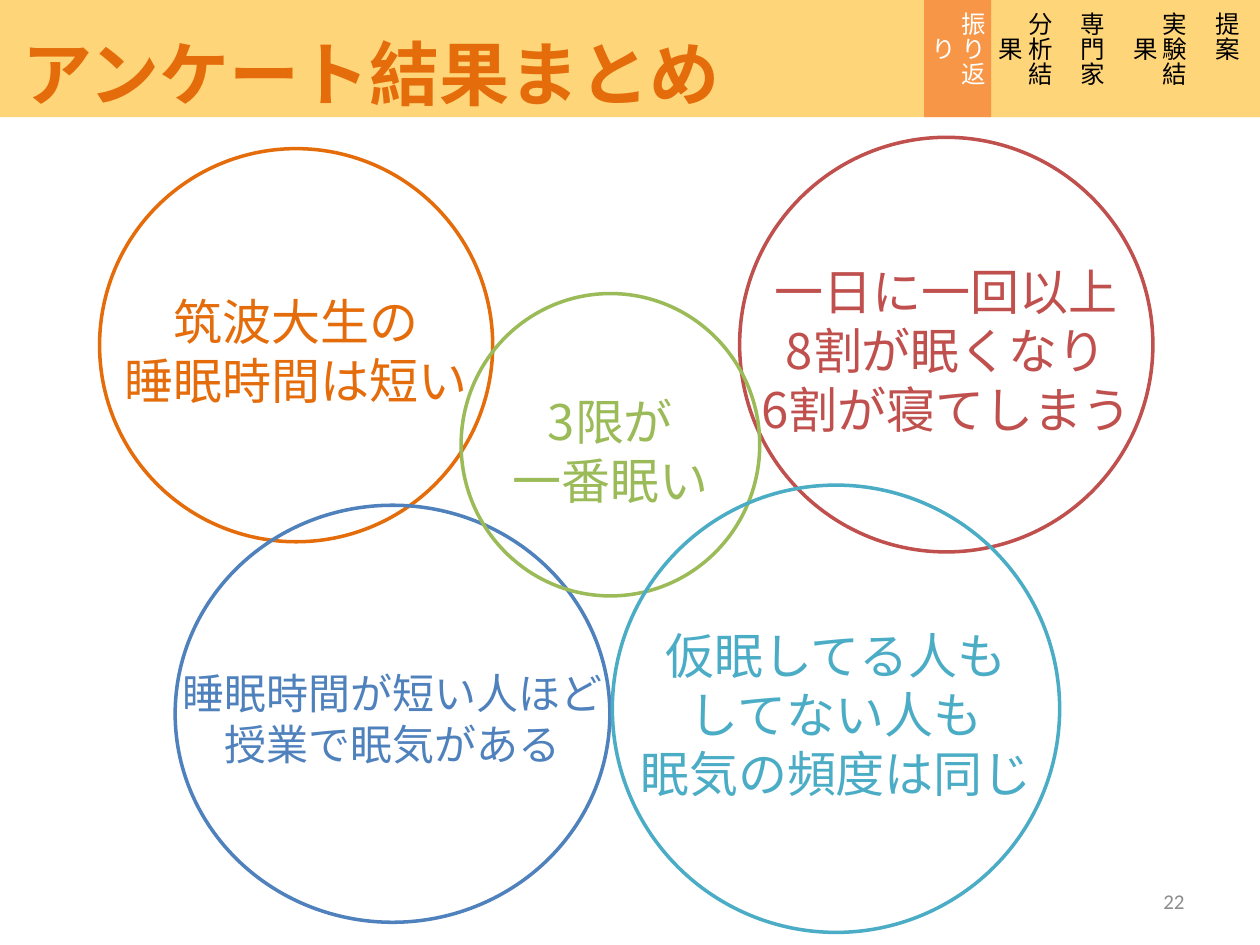
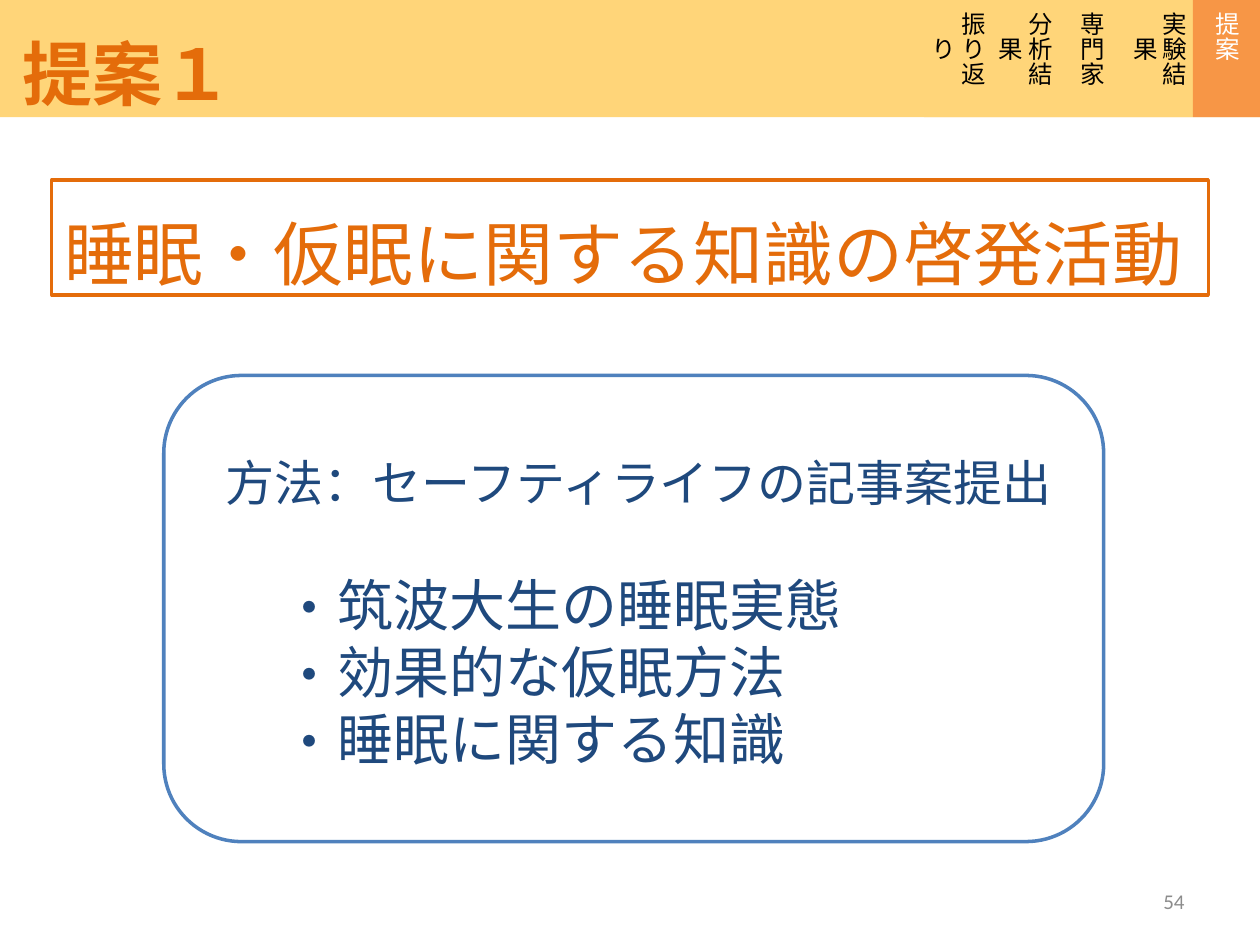
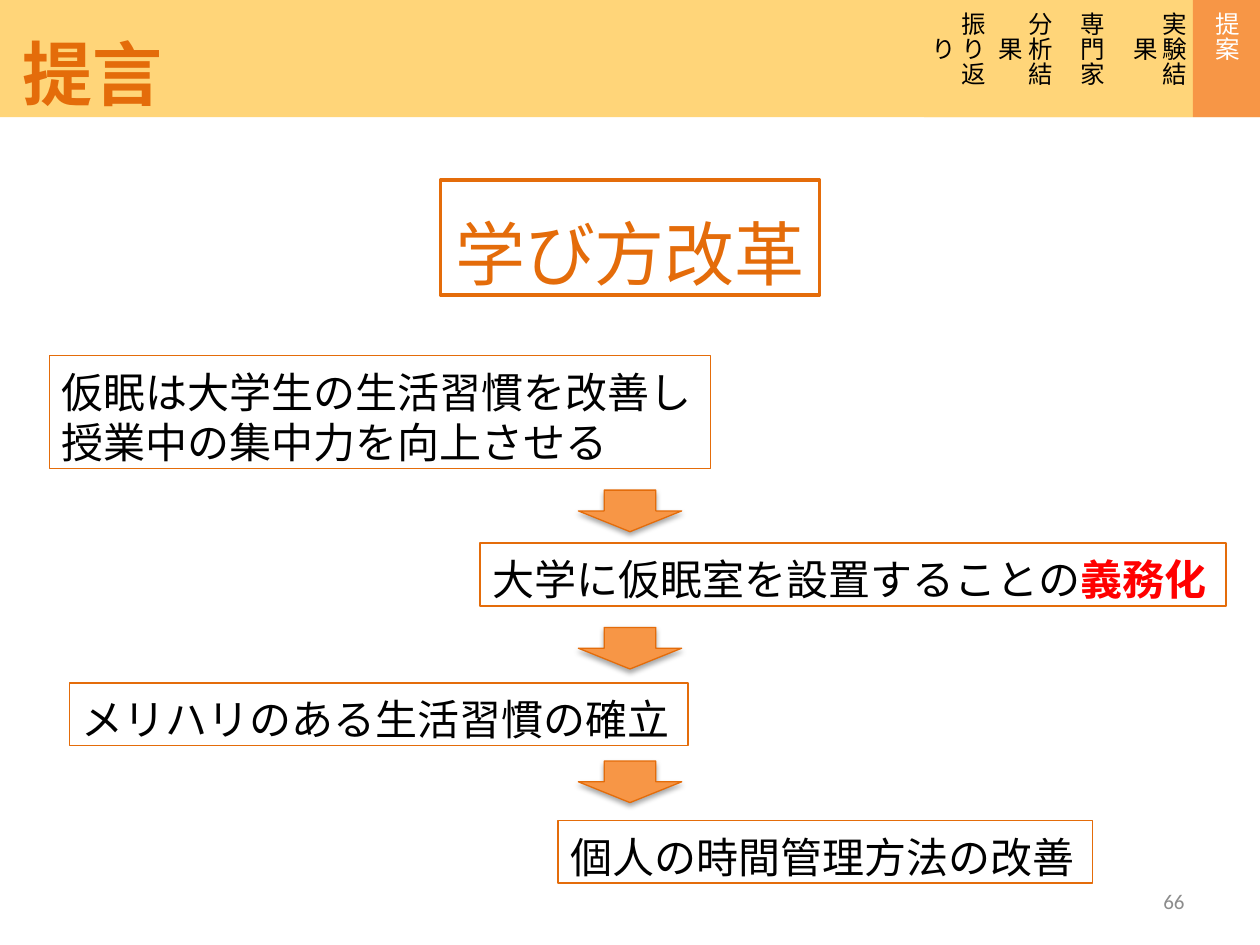
from lxml.etree import SubElement
from pptx import Presentation
from pptx.dml.color import RGBColor
from pptx.enum.shapes import MSO_SHAPE
from pptx.enum.text import MSO_ANCHOR, MSO_AUTO_SIZE, PP_ALIGN
from pptx.oxml.ns import qn
from pptx.util import Inches, Pt

WIDE, HIGH = 10, 7.5
BAND = 0.93
STEP = 0.533
LEAD = 1.2
DROP = 0.11
FACE = "Noto Sans CJK JP"
DEEP, WARM, PALE = "E46C0A", "F79646", "FFD579"
BLUE, NAVY, RED = "4F81BD", "1F497D", "FF0000"
BLACK, WHITE, GREY = "000000", "FFFFFF", "8C8C8C"
LEFT, MID, RIGHT = PP_ALIGN.LEFT, PP_ALIGN.CENTER, PP_ALIGN.RIGHT

TABS = ["振り返り", "分析結果", "専門家", "実験結果", "提案"]

RINGS = [
    ((0.79, 1.18, 3.12, 3.12), 2.95, 28, DEEP, ["筑波大生の", "睡眠時間は短い"]),
    ((1.39, 4.01, 3.45, 3.31), 3.57, 24, BLUE, ["睡眠時間が短い人ほど", "授業で眠気がある"]),
    ((5.87, 1.09, 3.28, 3.29), 3.19, 28, "C0504D",
     ["一日に一回以上", "8割が眠くなり", "6割が寝てしまう"]),
    ((3.66, 2.33, 2.37, 2.4), 1.77, 28, "9BBB59", ["3限が", "一番眠い"]),
    ((4.86, 3.85, 3.55, 3.55), 3.34, 28, "4BACC6",
     ["仮眠してる人も", "してない人も", "眠気の頻度は同じ"]),
]

PLAN = "方法：セーフティライフの記事案提出"
ITEMS = ["筑波大生の睡眠実態", "効果的な仮眠方法", "睡眠に関する知識"]

NOTES = [
    (0.39, 2.82, 5.25, ["仮眠は大学生の生活習慣を改善し", "授業中の集中力を向上させる"]),
    (3.81, 4.31, 5.92, [[("大学に仮眠室を設置することの", {}),
                         ("義務化", {"color": RED, "bold": True})]]),
    (0.55, 5.42, 4.91, ["メリハリのある生活習慣の確立"]),
    (4.43, 6.51, 4.24, ["個人の時間管理方法の改善"]),
]
DROPS = [3.89, 4.98, 6.04]


def tint(code):
    return RGBColor.from_string(code)


def put(obj, **vals):
    for key, val in vals.items():
        setattr(obj, key, val)


def place(shape, box):
    put(shape, **dict(zip(("left", "top", "width", "height"), map(Inches, box))))


def lift(shape):
    shape.element.getparent().append(shape.element)


def tall(count, size):
    return count * size * LEAD / 72 + 0.1


def draw(slide, kind, box, fill=None, line=None, weight=2):
    shape = slide.shapes.add_shape(kind, *map(Inches, box))
    shape.shadow.inherit = False
    if fill:
        shape.fill.solid()
        shape.fill.fore_color.rgb = tint(fill)
    else:
        shape.fill.background()
    if line:
        shape.line.color.rgb = tint(line)
        shape.line.width = Pt(weight)
    else:
        shape.line.fill.background()
    return shape


def style(run, size, color, bold=False, face=FACE):
    put(run.font, size=Pt(size), bold=bold, name=face)
    run.font.color.rgb = tint(color)
    SubElement(run._r.get_or_add_rPr(), qn("a:ea"), typeface=face)


def fill_line(para, line, size, color, align=LEFT, bold=False, face=FACE):
    put(para, alignment=align, space_before=Pt(0), space_after=Pt(0))
    if face == FACE:
        para.line_spacing = Pt(size * LEAD)
    for text, extra in [(line, {})] if isinstance(line, str) else line:
        run = para.add_run()
        run.text = text
        style(run, **{"size": size, "color": color, "bold": bold, "face": face, **extra})


def frame(shape, size, pad=0, wrap=True):
    text = shape.text_frame
    put(text, word_wrap=wrap, auto_size=MSO_AUTO_SIZE.NONE,
        vertical_anchor=MSO_ANCHOR.TOP, margin_left=Inches(0.1),
        margin_right=Inches(0.1), margin_bottom=0,
        margin_top=Inches(0.05 + pad + DROP * size / 72))
    return text


def write(text, lines, size, color, **look):
    for num, line in enumerate(lines):
        para = text.add_paragraph() if num else text.paragraphs[0]
        fill_line(para, line, size, color, **look)


def mark(para, size):
    props = para._p.get_or_add_pPr()
    em = int(Pt(size))
    props.set("marL", str(em * 2))
    props.set("indent", str(-em))
    SubElement(props, qn("a:buFont"), typeface=FACE)
    SubElement(props, qn("a:buChar"), char="・")


def plain(para):
    props = para._p.get_or_add_pPr()
    props.set("marL", "0")
    props.set("indent", "0")
    SubElement(props, qn("a:buNone"))


def start(deck, layout, title, page, live):
    slide = deck.slides.add_slide(deck.slide_layouts[layout])
    draw(slide, MSO_SHAPE.RECTANGLE, (0, 0, WIDE, BAND), PALE)
    head = slide.shapes.title
    place(head, (0.08, 0.13, 7.2, tall(1, 40)))
    write(frame(head, 40, wrap=False), [title], 40, DEEP, bold=True)
    lift(head)
    for num, name in enumerate(TABS):
        left = WIDE - (len(TABS) - num) * STEP
        hot = name == live
        tab = draw(slide, MSO_SHAPE.RECTANGLE, (left, 0, STEP, BAND), WARM if hot else PALE)
        tab.text_frame.vertical_anchor = MSO_ANCHOR.MIDDLE
        tab.text_frame._txBody.bodyPr.set("vert", "eaVert")
        write(tab.text_frame, [name], 14, WHITE if hot else BLACK, align=MID)
    foot = slide.shapes.add_textbox(*map(Inches, (7.17, 6.95, 2.33, 0.4))).text_frame
    put(foot, word_wrap=True, vertical_anchor=MSO_ANCHOR.MIDDLE)
    write(foot, [page], 12, GREY, align=RIGHT, face="Calibri")
    return slide


def claim(slide, text, wide, align):
    box = ((WIDE - wide) / 2, 1.43, wide, 0.91)
    shape = draw(slide, MSO_SHAPE.RECTANGLE, box, WHITE, DEEP)
    write(frame(shape, 40, pad=0.13), [text], 40, DEEP, align=align)


def survey(deck):
    slide = start(deck, 5, "アンケート結果まとめ", "22", "振り返り")
    for box, span, size, color, lines in RINGS:
        draw(slide, MSO_SHAPE.OVAL, box, line=color)
        left, top, wide, high = box
        deep = tall(len(lines), size)
        spot = (left + (wide - span) / 2, top + (high - deep) / 2, span, deep)
        label = slide.shapes.add_textbox(*map(Inches, spot))
        write(frame(label, size), lines, size, color, align=MID)


def offer(deck):
    slide = start(deck, 1, "提案１", "54", "提案")
    claim(slide, "睡眠・仮眠に関する知識の啓発活動", 9.18, LEFT)
    draw(slide, MSO_SHAPE.ROUNDED_RECTANGLE, (1.3, 2.98, 7.46, 3.7), WHITE, BLUE)
    body = slide.placeholders[1]
    place(body, (1.69, 3.5, 6.88, 2.66))
    lift(body)
    text = frame(body, 28)
    plain(text.paragraphs[0])
    write(text, [PLAN], 28, NAVY)
    for num, item in enumerate(ITEMS):
        para = text.add_paragraph()
        mark(para, 32)
        fill_line(para, item, 32, NAVY)
        if num == 0:
            para.space_before = Pt(28 * LEAD)


def reform(deck):
    slide = start(deck, 5, "提言", "66", "提案")
    claim(slide, "学び方改革", 3.01, MID)
    for left, top, wide, lines in NOTES:
        box = (left, top, wide, tall(len(lines), 24))
        note = draw(slide, MSO_SHAPE.RECTANGLE, box, WHITE, DEEP, 0.75)
        write(frame(note, 24), lines, 24, BLACK)
    for top in DROPS:
        arrow = draw(slide, MSO_SHAPE.DOWN_ARROW, (4.59, top, 0.82, 0.33), WARM, DEEP, 0.75)
        glow = arrow.element.spPr.find(qn("a:effectLst"))
        shade = SubElement(glow, qn("a:outerShdw"), blurRad=str(Pt(3.1)),
                           dist=str(Pt(1.8)), dir="5400000", rotWithShape="0")
        ink = SubElement(shade, qn("a:srgbClr"), val=BLACK)
        SubElement(ink, qn("a:alpha"), val="35000")


def main():
    deck = Presentation()
    put(deck, slide_width=Inches(WIDE), slide_height=Inches(HIGH))
    for build in (survey, offer, reform):
        build(deck)
    deck.save("out.pptx")


if __name__ == "__main__":
    main()
